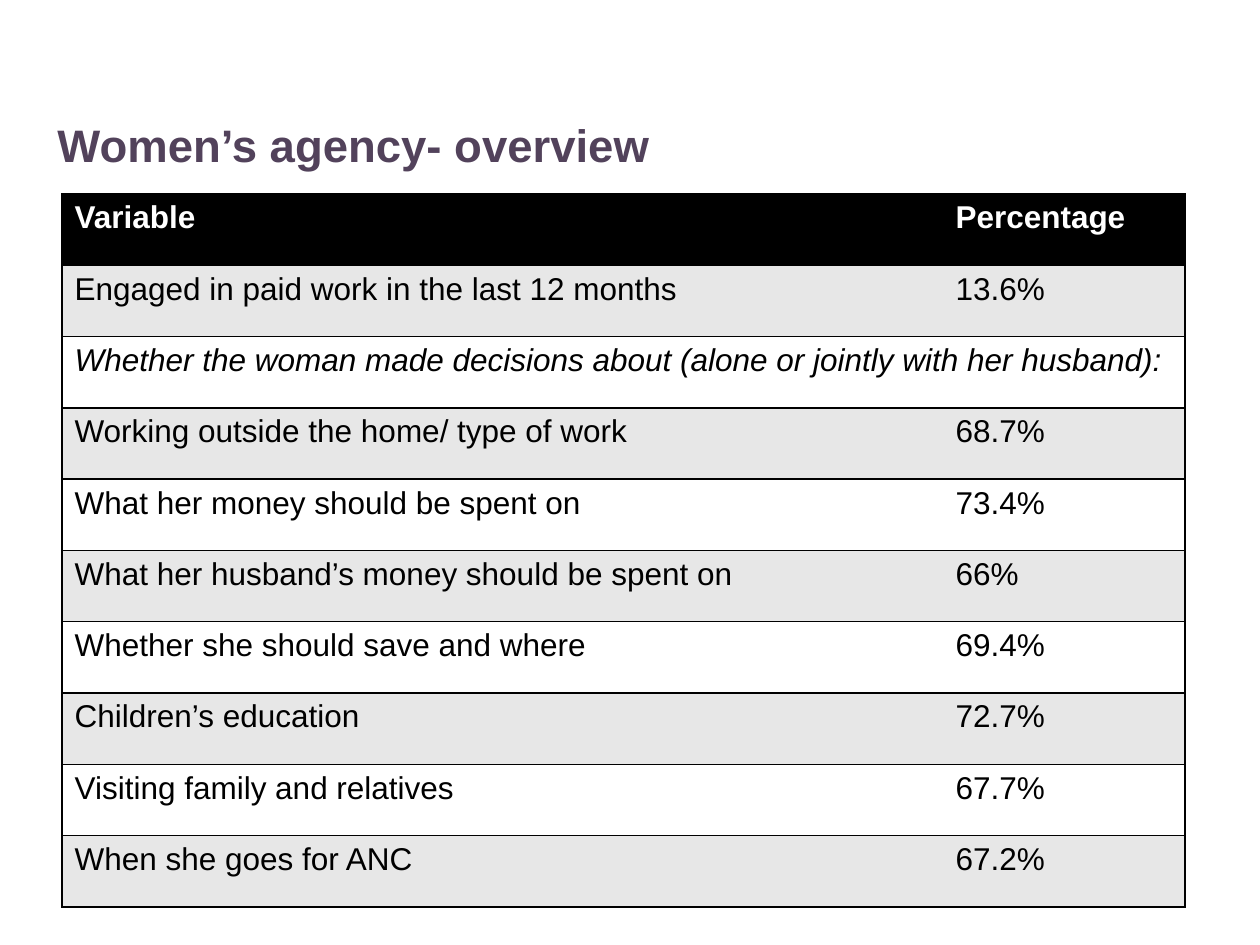
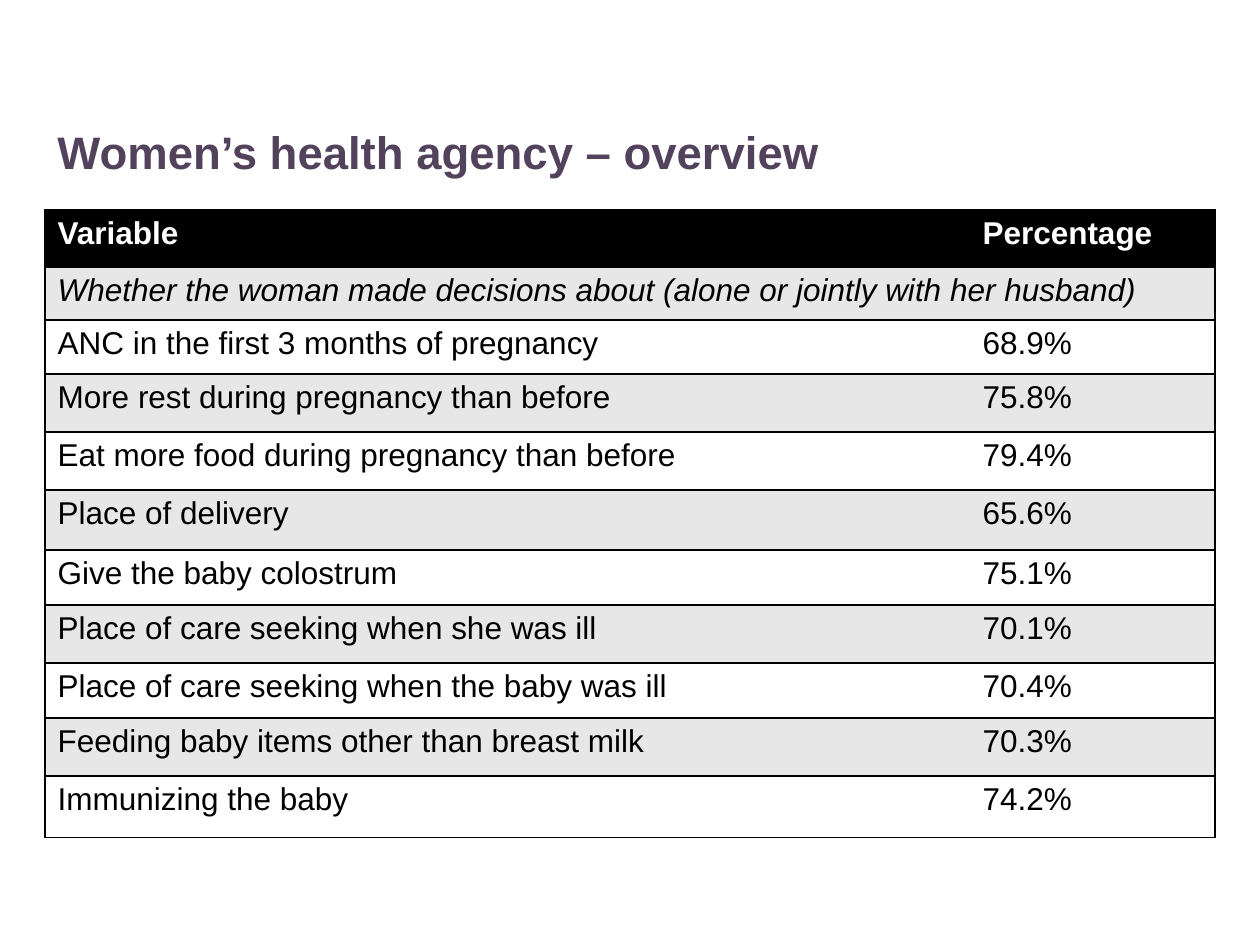
"""Build two table slides on women's agency."""
from dataclasses import dataclass

from lxml.etree import SubElement as Sub
from pptx import Presentation
from pptx.dml.color import RGBColor as RGB
from pptx.enum.text import MSO_ANCHOR as Anchor
from pptx.oxml.ns import qn
from pptx.util import Emu, Pt

SCALE = 914400 / 126
PLAIN = "{2D5ABB26-0587-4C30-8999-92F81FD0307C}"


@dataclass(frozen=True)
class Theme:
    face: str = "Arial"
    title: str = "52425B"
    ink: str = "000000"
    paper: str = "FFFFFF"
    band: str = "E7E7E7"
    head: int = 26
    body: int = 18
    rule: int = 1


THEME = Theme()
HEADER = ("Variable", "Percentage")

AGENCY = [
    ("Engaged in paid work in the last 12 months", "13.6%"),
    ("Whether the woman made decisions about (alone or jointly with her husband):",),
    ("Working outside the home/ type of work", "68.7%"),
    ("What her money should be spent on", "73.4%"),
    ("What her husband’s money should be spent on", "66%"),
    ("Whether she should save and where", "69.4%"),
    ("Children’s education", "72.7%"),
    ("Visiting family and relatives", "67.7%"),
    ("When she goes for ANC", "67.2%"),
]

HEALTH = [
    ("Whether the woman made decisions about (alone or jointly with her husband)",),
    ("ANC in the first 3 months of pregnancy", "68.9%"),
    ("More rest during pregnancy than before", "75.8%"),
    ("Eat more food during pregnancy than before", "79.4%"),
    ("Place of delivery", "65.6%"),
    ("Give the baby colostrum", "75.1%"),
    ("Place of care seeking when she was ill", "70.1%"),
    ("Place of care seeking when the baby was ill", "70.4%"),
    ("Feeding baby items other than breast milk", "70.3%"),
    ("Immunizing the baby", "74.2%"),
]


def px(num):
    """Turn pixels into EMU."""
    return Emu(round(num * SCALE))


def write(frame, text, size, color, bold=False, italic=False):
    """Put one styled paragraph in a text frame."""
    para = frame.paragraphs[0]
    para.text = text
    font = para.font
    font.name, font.size = THEME.face, Pt(size)
    font.bold, font.italic = bold, italic
    font.color.rgb = RGB.from_string(color)


def add_title(slide, text, top, height):
    """Add the slide title."""
    frame = slide.shapes.add_textbox(px(45), px(top), px(1170), px(height)).text_frame
    frame.word_wrap = True
    frame.vertical_anchor = Anchor.TOP
    frame.margin_top = px(11)
    write(frame, text, THEME.head, THEME.title, bold=True)


def rule(cell, sides):
    """Draw cell borders on the given sides."""
    props = cell._tc.get_or_add_tcPr()
    for side in sides:
        line = Sub(props, qn(f"a:ln{side}"), w=str(Pt(THEME.rule)))
        fill = Sub(line, qn("a:solidFill"))
        Sub(fill, qn("a:srgbClr"), val=THEME.ink)


def paint(cell, color):
    """Fill a cell."""
    cell.fill.solid()
    cell.fill.fore_color.rgb = RGB.from_string(color)


def add_grid(slide, left, top, widths, heights, data):
    """Add a banded table, where a row of one text spans both columns."""
    rows = [HEADER, *data]
    table = slide.shapes.add_table(
        len(rows), len(widths), px(left), px(top), px(sum(widths)), px(sum(heights))
    ).table
    table._tbl.tblPr.find(qn("a:tableStyleId")).text = PLAIN
    table.first_row = table.horz_banding = False
    for col, width in zip(table.columns, widths):
        col.width = px(width)
    for num, (texts, height) in enumerate(zip(rows, heights)):
        table.rows[num].height = px(height)
        first, last = table.cell(num, 0), table.cell(num, 1)
        head, span = num == 0, len(texts) == 1
        if span:
            first.merge(last)
        rule(first, "LRTB" if span else "LTB")
        rule(last, "RTB")
        fill = THEME.ink if head else THEME.band if num % 2 else THEME.paper
        for cell in (first, last):
            paint(cell, fill)
        for cell, text in zip((first, last), texts):
            color = THEME.paper if head else THEME.ink
            write(cell.text_frame, text, THEME.body, color, head, span)


def main():
    """Build and save the deck."""
    deck = Presentation()
    deck.slide_width, deck.slide_height = px(1260), px(945)
    blank = deck.slide_layouts[6]

    slide = deck.slides.add_slide(blank)
    add_title(slide, "Women’s agency- overview", 106, 76)
    add_grid(slide, 62, 194, (881, 242), [71.3] * 10, AGENCY)

    slide = deck.slides.add_slide(blank)
    add_title(slide, "Women’s health agency – overview", 113, 82)
    heights = (57, 53, 54, 58, 58, 60, 55, 58, 55, 58, 62)
    add_grid(slide, 45, 210, (925, 245), heights, HEALTH)

    deck.save("out.pptx")


if __name__ == "__main__":
    main()
